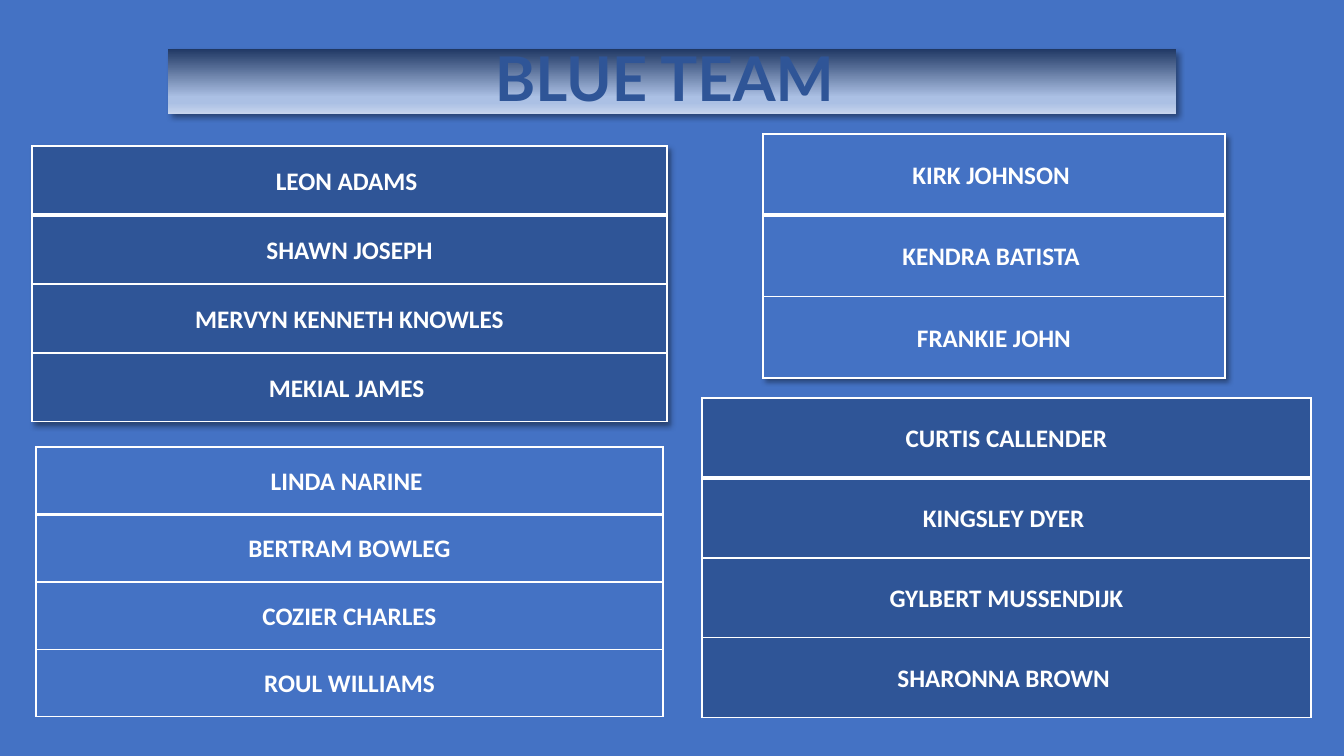
from lxml.etree import SubElement
from pptx import Presentation
from pptx.dml.color import RGBColor
from pptx.enum.text import MSO_ANCHOR, MSO_AUTO_SIZE, PP_ALIGN
from pptx.oxml import parse_xml
from pptx.oxml.ns import nsdecls, qn
from pptx.util import Pt

BLUE = RGBColor(0x44, 0x72, 0xC4)
NAVY = RGBColor(0x2F, 0x55, 0x97)
WHITE = RGBColor(0xFF, 0xFF, 0xFF)

SLIDE_SIZE = (1344, 756)
EMU_PER_PX = 12192000 / SLIDE_SIZE[0]

TITLE = "BLUE TEAM "
TITLE_BOX = (168, 49, 1008, 65)
TITLE_GRADIENT = [(0, "203864"), (74, "ABC0E4"), (83, "ABC0E4"), (100, "C7D5ED")]

# box in px, fill, has shadow, members
GROUPS = [
    ((32, 146, 635, 276), NAVY, True,
     ["LEON ADAMS ", "SHAWN JOSEPH", "MERVYN KENNETH KNOWLES", "MEKIAL JAMES "]),
    ((36, 447, 627, 270), BLUE, False,
     ["LINDA NARINE ", "BERTRAM BOWLEG", "COZIER CHARLES", "ROUL WILLIAMS"]),
    ((763, 134, 462, 244), BLUE, True,
     ["KIRK JOHNSON ", "KENDRA BATISTA ", "FRANKIE JOHN"]),
    ((702, 398, 609, 320), NAVY, False,
     ["CURTIS CALLENDER", "KINGSLEY DYER ", "GYLBERT MUSSENDIJK", "SHARONNA BROWN "]),
]
CELL_FORMAT = {"margin_left": 7, "margin_right": 7, "margin_top": 0, "margin_bottom": 0}


def px(length):
    return round(length * EMU_PER_PX)


def shadow_effect():
    return parse_xml(
        f'<a:effectLst {nsdecls("a")}>'
        '<a:outerShdw blurRad="50800" dist="38100" dir="2700000" algn="tl" rotWithShape="0">'
        '<a:srgbClr val="000000"><a:alpha val="40000"/></a:srgbClr>'
        '</a:outerShdw></a:effectLst>')


def gradient_fill(stops):
    colors = "".join(f'<a:gs pos="{position * 1000}"><a:srgbClr val="{color}"/></a:gs>'
                     for position, color in stops)
    return parse_xml(f'<a:gradFill {nsdecls("a")} rotWithShape="1"><a:gsLst>{colors}</a:gsLst>'
                     '<a:lin ang="5400000" scaled="0"/></a:gradFill>')


def write_line(paragraph, text, font, size, color, spacing):
    paragraph.alignment = PP_ALIGN.CENTER
    paragraph.line_spacing = spacing
    run = paragraph.add_run()
    run.text = text
    for name, value in {"name": font, "size": Pt(size), "bold": True}.items():
        setattr(run.font, name, value)
    run.font.color.rgb = color


def set_borders(cell, widths):
    """Draw white cell borders; widths are points for left, right, top and bottom."""
    properties = cell._tc.get_or_add_tcPr()
    for index, (side, width) in enumerate(zip("LRTB", widths)):
        border = SubElement(properties, qn(f"a:ln{side}"), w=str(Pt(width)))
        fill = SubElement(border, qn("a:solidFill"))
        SubElement(fill, qn("a:srgbClr"), val=str(WHITE))
        properties.insert(index, border)


def add_title(slide):
    title = slide.shapes.title
    title.left, title.top, title.width, title.height = map(px, TITLE_BOX)
    frame = title.text_frame
    frame.auto_size = MSO_AUTO_SIZE.NONE
    frame.vertical_anchor = MSO_ANCHOR.MIDDLE
    write_line(frame.paragraphs[0], TITLE, "Lato", 44, NAVY, 0.9)
    title._element.spPr.append(gradient_fill(TITLE_GRADIENT))
    title._element.spPr.append(shadow_effect())


def add_group(slide, box, color, has_shadow, members):
    table = slide.shapes.add_table(len(members), 1, *map(px, box)).table
    table.horz_banding = False
    if has_shadow:
        table._tbl.tblPr.insert(0, shadow_effect())
    for index, member in enumerate(members):
        table.rows[index].height = px(box[3] / len(members))
        cell = table.cell(index, 0)
        for name, value in CELL_FORMAT.items():
            setattr(cell, name, px(value))
        cell.vertical_anchor = MSO_ANCHOR.MIDDLE
        cell.fill.solid()
        cell.fill.fore_color.rgb = color
        set_borders(cell, (1, 1, 3 if index == 1 else 1, 3 if index == 0 else 1))
        write_line(cell.text_frame.paragraphs[0], member, "Calibri", 18, WHITE, 1.07)


def main():
    presentation = Presentation()
    presentation.slide_width, presentation.slide_height = map(px, SLIDE_SIZE)
    slide = presentation.slides.add_slide(presentation.slide_layouts[5])
    slide.background.fill.solid()
    slide.background.fill.fore_color.rgb = BLUE
    add_title(slide)
    for group in GROUPS:
        add_group(slide, *group)
    presentation.save("out.pptx")


if __name__ == "__main__":
    main()
